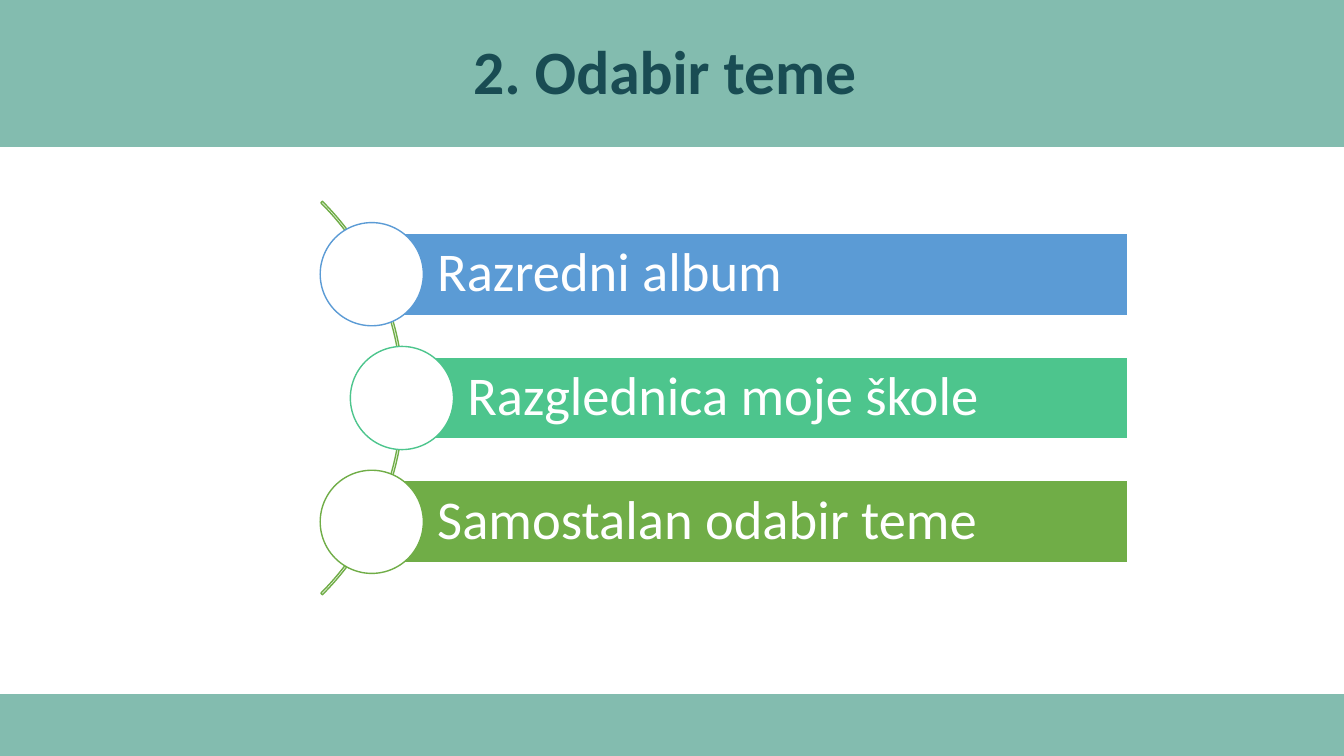
from pptx import Presentation
from pptx import util as u
from pptx.dml.color import RGBColor
from pptx.enum import shapes, text

HUES = {
    "band": "83BCAF",
    "title": "194C53",
    "white": "FFFFFF",
    "blue": "5B9BD5",
    "mint": "4DC58D",
    "green": "70AD47",
}
KIND = shapes.MSO_SHAPE
WIDTH, HEIGHT = 33.87, 19.05


class Deck:
    font = "Calibri"

    def __init__(self):
        self.file = Presentation()
        self.file.slide_width = u.Cm(WIDTH)
        self.file.slide_height = u.Cm(HEIGHT)
        self.slide = self.file.slides.add_slide(self.file.slide_layouts[5])

    def hue(self, name):
        return RGBColor.from_string(HUES[name])

    def assign(self, item, values):
        for key, value in values.items():
            setattr(item, key, value)

    def shape(self, kind, box, fill=None, line=None):
        item = self.slide.shapes.add_shape(kind, *map(u.Cm, box))
        item.shadow.inherit = False
        if fill:
            item.fill.solid()
            item.fill.fore_color.rgb = self.hue(fill)
        else:
            item.fill.background()
        if line:
            item.line.color.rgb = self.hue(line)
            item.line.width = u.Pt(1)
        else:
            item.line.fill.background()
        return item

    def label(self, item, words, size, color, align, bold=False, left=0.28):
        frame = item.text_frame
        self.assign(frame, {
            "text": words,
            "word_wrap": True,
            "auto_size": text.MSO_AUTO_SIZE.NONE,
            "vertical_anchor": text.MSO_ANCHOR.MIDDLE,
            "margin_left": u.Cm(left),
            "margin_right": u.Cm(0.28),
        })
        line = frame.paragraphs[0]
        self.assign(line, {"alignment": align, "line_spacing": 0.9})
        self.assign(line.font, {"name": self.font, "size": u.Pt(size), "bold": bold})
        line.font.color.rgb = self.hue(color)

    def band(self, top, height):
        item = self.shape(KIND.RECTANGLE, (0, top, WIDTH, height), "band")
        self.slide.shapes._spTree.insert(2, item._element)

    def title(self, words):
        item = self.slide.shapes.title
        box = {"left": 2.33, "top": 0.53, "width": 29.21, "height": 2.69}
        self.assign(item, {key: u.Cm(value) for key, value in box.items()})
        self.label(item, words, 44, "title", text.PP_ALIGN.CENTER, True)

    def arc(self, mid, size):
        box = (-3.84, mid - size / 2, size, size)
        item = self.shape(KIND.BLOCK_ARC, box, line="green")
        for index, value in enumerate((189, 27, 0.004)):
            item.adjustments[index] = value

    def topic(self, words, color, left, mid):
        right, height, disc = 28.41, 2.07, 2.6
        box = (left, mid - height / 2, right - left, height)
        bar = self.shape(KIND.RECTANGLE, box, color, "white")
        self.label(bar, words, 39, "white", text.PP_ALIGN.LEFT, left=1.65)
        box = (left - disc / 2, mid - disc / 2, disc, disc)
        self.shape(KIND.OVAL, box, "white", color)


def main():
    deck = Deck()
    deck.band(0, 3.7)
    deck.band(17.49, 1.56)
    deck.title("2. Odabir teme ")
    center, step = 10.03, 3.12
    deck.arc(center, 14.02)
    topics = (
        ("Razredni album", "blue", 9.37),
        ("Razglednica moje škole", "mint", 10.13),
        ("Samostalan odabir teme", "green", 9.37),
    )
    for row, (words, color, left) in enumerate(topics):
        deck.topic(words, color, left, center + (row - 1) * step)
    deck.file.save("out.pptx")


if __name__ == "__main__":
    main()
